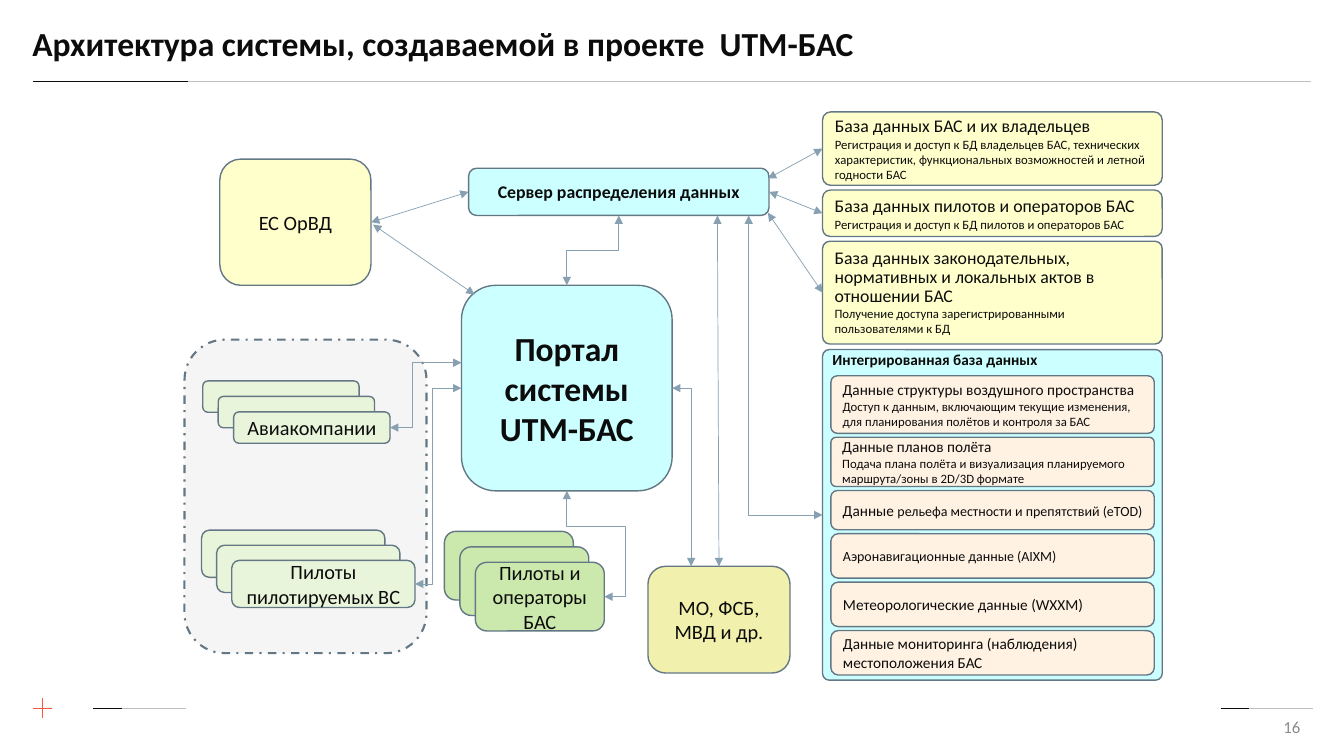
from lxml.etree import SubElement
from pptx import Presentation
from pptx.dml.color import RGBColor
from pptx.enum.dml import MSO_LINE
from pptx.enum.shapes import MSO_CONNECTOR, MSO_SHAPE
from pptx.enum.text import MSO_ANCHOR, PP_ALIGN
from pptx.oxml.ns import qn
from pptx.util import Cm, Pt

INK = RGBColor(0x0C, 0x0C, 0x0C)
PAGE_GREY = RGBColor(0x8C, 0x8C, 0x8C)
RULE = RGBColor(0xBF, 0xBF, 0xBF)
ORANGE = RGBColor(0xF7, 0x59, 0x3B)
OUTLINE = RGBColor(0x64, 0x77, 0x84)
ARROW = RGBColor(0x87, 0xA1, 0xB2)
PANEL = RGBColor(0xD9, 0xD9, 0xD9)
CYAN = RGBColor(0xCC, 0xFF, 0xFF)
YELLOW = RGBColor(0xFF, 0xFF, 0xCC)
OLIVE = RGBColor(0xF1, 0xF1, 0xAD)
GREEN = RGBColor(0xCC, 0xE9, 0xAD)
PALE_GREEN = RGBColor(0xE9, 0xF5, 0xDB)
PEACH = RGBColor(0xFF, 0xF2, 0xE3)

TOP, LEFT, BOTTOM, RIGHT = range(4)


def add_span(para, text, size, bold=False, color=INK):
    span = para.add_run()
    span.text = text
    font = span.font
    font.name, font.size, font.bold = "Calibri", Pt(size), bold
    font.color.rgb = color


def add_label(page, box, text, size, bold=False, color=INK,
              align=PP_ALIGN.LEFT, anchor=MSO_ANCHOR.TOP):
    frame = page.shapes.add_textbox(*map(Cm, box)).text_frame
    frame.word_wrap, frame.vertical_anchor = True, anchor
    frame.paragraphs[0].alignment = align
    add_span(frame.paragraphs[0], text, size, bold, color)


def add_card(page, box, fill, paras=(), align=PP_ALIGN.CENTER, bold=False, corner=None):
    """Rounded card; paras is a list of paragraphs, each a list of (text, size)."""
    card = page.shapes.add_shape(MSO_SHAPE.ROUNDED_RECTANGLE, *map(Cm, box))
    card.shadow.inherit = False
    card.fill.solid()
    card.fill.fore_color.rgb = fill
    card.line.color.rgb, card.line.width = OUTLINE, Pt(1)
    if corner is not None:
        card.adjustments[0] = corner
    frame = card.text_frame
    frame.word_wrap, frame.vertical_anchor = True, MSO_ANCHOR.MIDDLE
    for index, spans in enumerate(paras):
        para = frame.add_paragraph() if index else frame.paragraphs[0]
        para.alignment = align
        for text, size in spans:
            add_span(para, text, size, bold)
    return card


def add_stack(page, box, step, fill, text):
    """Three overlapping cards; the front one carries the text."""
    left, top, width, height = box
    for index in range(3):
        paras = [[(text, 14.5)]] if index == 2 else []
        card = add_card(page, (left + index * step, top + index * step, width, height), fill, paras)
    return card


def add_column(page, left, top, width, gap, fill, rows):
    """Cards one under another; a row is (height, corner, paragraphs)."""
    cards = []
    for height, corner, paras in rows:
        cards.append(add_card(page, (left, top, width, height), fill, paras, PP_ALIGN.LEFT, corner=corner))
        top += height + gap
    return cards


def add_arrowheads(line):
    line.color.rgb, line.width = ARROW, Pt(0.5)
    outline = line._get_or_add_ln()
    for end in ("a:headEnd", "a:tailEnd"):
        SubElement(outline, qn(end), type="triangle")


def add_line(page, start, end):
    line = page.shapes.add_connector(MSO_CONNECTOR.STRAIGHT, *start, *end)
    SubElement(line._element.spPr, qn("a:effectLst"))
    return line


def side(shape, site):
    middle_x, middle_y = shape.left + shape.width // 2, shape.top + shape.height // 2
    return {TOP: (middle_x, shape.top), LEFT: (shape.left, middle_y),
            BOTTOM: (middle_x, shape.top + shape.height),
            RIGHT: (shape.left + shape.width, middle_y)}[site]


def add_link(page, start, end, start_joint=None, end_joint=None):
    """Straight two-way arrow, joined to a (shape, site) where one is given."""
    link = add_line(page, start or side(*start_joint), end or side(*end_joint))
    add_arrowheads(link.line)
    if start_joint:
        link.begin_connect(*start_joint)
    if end_joint:
        link.end_connect(*end_joint)


def add_route(page, *points):
    """Two-way arrow with right-angled bends."""
    builder = page.shapes.build_freeform(*points[0])
    builder.add_line_segments(points[1:], close=False)
    route = builder.convert_to_shape()
    route.shadow.inherit = False
    route.fill.background()
    add_arrowheads(route.line)


def add_frame(page, box):
    """Title, rules, cross and page number."""
    left, top, width, height = box
    title = page.shapes.title
    title.left, title.top, title.width, title.height = Cm(left + 0.56), Cm(top + 0.23), Cm(24.77), Cm(1.83)
    title.text_frame.vertical_anchor = MSO_ANCHOR.MIDDLE
    para = title.text_frame.paragraphs[0]
    para.alignment, para.line_spacing = PP_ALIGN.LEFT, 0.9
    add_span(para, "Архитектура системы, создаваемой в проекте  UTM-БАС", 24, True)

    foot = top + height - 1.2
    strokes = []
    for x, y, length, accent in ((0.84, 2.06, 32.2, 3.89), (2.34, foot, 2.34, 0.73), (30.76, foot, 2.32, 0.72)):
        strokes += [(x, y, x + length, y, RULE), (x, y, x + accent, y, INK)]
    strokes += [(1.07, foot - 0.25, 1.07, foot + 0.25, ORANGE), (0.82, foot, 1.32, foot, ORANGE)]
    for x1, y1, x2, y2, color in strokes:
        line = add_line(page, (Cm(x1), Cm(y1)), (Cm(x2), Cm(y2))).line
        line.color.rgb, line.width = color, Pt(0.5)
    add_label(page, (25.4, foot - 0.05, 7.62, 1.02), "16", 12, color=PAGE_GREY,
              align=PP_ALIGN.RIGHT, anchor=MSO_ANCHOR.MIDDLE)


def add_airspace_users(page, box):
    """Dashed panel with airlines and pilots; returns the two front cards."""
    left, top = box[:2]
    panel = add_card(page, box, PANEL)
    panel.line.width, panel.line.dash_style = Pt(1.5), MSO_LINE.DASH_DOT
    color = panel._element.spPr.find(qn("a:solidFill")).find(qn("a:srgbClr"))
    SubElement(color, qn("a:alpha"), val="24000")
    airlines = add_stack(page, (left + 0.46, top + 1.04, 3.94, 0.79), 0.39, PALE_GREEN, "Авиакомпании")
    pilots = add_stack(page, (left + 0.43, top + 4.8, 4.62, 1.19), 0.38, PALE_GREEN, "Пилоты пилотируемых ВС")
    return airlines, pilots


def add_registries(page, box):
    """Three yellow databases; returns their cards."""
    left, top, width = box[:3]
    cards = add_column(page, left, top, width, 0.12, YELLOW, [
        (1.85, 0.11, [[("База данных БАС и их владельцев", 12.7)],
                      [("Регистрация и доступ к БД владельцев БАС, технических характеристик, "
                        "функциональных возможностей и летной годности БАС", 9.1)]]),
        (1.17, None, [[("База данных пилотов и операторов БАС", 12.7)],
                      [("Регистрация и доступ к БД пилотов и операторов БАС", 9.1)]]),
        (2.59, 0.07, [[("База данных законодательных, нормативных и локальных актов в отношении БАС", 12.7)],
                      [("Получение доступа зарегистрированными пользователями к БД", 9.1)]])])
    cards[2].text_frame.paragraphs[0].line_spacing = Pt(13.6)
    return cards


def add_integrated_base(page, box):
    """Cyan panel with its heading and six data cards; returns the panel."""
    left, top, width = box[:3]
    panel = add_card(page, box, CYAN, corner=0.02)
    add_label(page, (left, top - 0.1, 7.09, 0.71), "Интегрированная база данных", 10.9, True)
    add_column(page, left + 0.21, top + 0.66, width - 0.41, 0.1, PEACH, [
        (1.45, 0.11, [[("Данные структуры воздушного пространства", 10.9)],
                      [("Доступ к данным, включающим текущие изменения, "
                        "для планирования полётов и контроля за БАС", 9.1)]]),
        (1.24, 0.1, [[("Данные планов полёта", 10.9)],
                     [("Подача плана полёта и визуализация планируемого маршрута/зоны в 2D/3D формате", 9.1)]]),
        (0.99, None, [[("Данные ", 10.9), ("рельефа местности и препятствий (eTOD)", 10)]]),
        (1.12, None, [[("Аэронавигационные данные (AIXM)", 10)]]),
        (1.12, None, [[("Метеорологические данные (WXXM)", 10.9)]]),
        (1.12, None, [[("Данные мониторинга (наблюдения) местоположения БАС", 10.9)]])])
    return panel


def add_architecture(page, box):
    """The whole diagram and its arrows."""
    left, top = box[:2]

    def at(x, y):
        return Cm(left + x), Cm(top + y)

    def place(x, y, width, height):
        return left + x, top + y, width, height

    airlines, pilots = add_airspace_users(page, place(0, 5.74, 6.1, 7.9))
    portal = add_card(page, place(6.98, 4.37, 5.31, 5.18), CYAN, [[("Портал системы UTM-БАС", 24)]], bold=True)
    server = add_card(page, place(7.16, 1.42, 7.57, 1.19), CYAN, [[("Сервер распределения данных", 12.7)]], bold=True)
    control = add_card(page, place(0.89, 1.19, 3.81, 3.18), YELLOW, [[("ЕС ОрВД", 14.5)]])
    operators = add_stack(page, place(6.55, 10.57, 3.25, 1.73), 0.39, GREEN, "Пилоты и операторы БАС")
    agencies = add_card(page, place(11.68, 11.45, 3.58, 2.69), OLIVE, [[("МО, ФСБ, МВД и др.", 14.5)]])
    owners, licences, laws = add_registries(page, place(16.08, 0, 8.56, 5.85))
    integrated = add_integrated_base(page, place(16.08, 5.99, 8.56, 8.33))

    # Straight arrows
    add_link(page, None, None, (control, RIGHT), (server, LEFT))
    add_link(page, at(4.75, 2.84), at(7.31, 4.6))
    add_link(page, at(14.7, 1.68), None, end_joint=(owners, LEFT))
    add_link(page, None, None, (server, RIGHT), (licences, LEFT))
    add_link(page, at(14.7, 2.54), None, end_joint=(laws, LEFT))
    add_link(page, at(13.43, 2.61), None, end_joint=(agencies, TOP))

    # Bent arrows
    portal_top, portal_left, portal_bottom, portal_right = (side(portal, site) for site in range(4))
    server_bottom = side(server, BOTTOM)
    halfway = (portal_top[1] + server_bottom[1]) // 2
    add_route(page, portal_top, (portal_top[0], halfway), (server_bottom[0], halfway), server_bottom)
    start, turn = side(operators, RIGHT), at(11.12, 10.44)
    add_route(page, start, (turn[0], start[1]), turn, (portal_bottom[0], turn[1]), portal_bottom)
    for card, bend, end in ((pilots, 6.25, portal_left), (airlines, 5.74, (portal_left[0], at(0, 6.32)[1]))):
        start, bend_x = side(card, RIGHT), at(bend, 0)[0]
        add_route(page, start, (bend_x, start[1]), (bend_x, end[1]), end)
    for start, end in ((at(14.22, 2.61), side(integrated, LEFT)), (at(12.77, 11.45), portal_right)):
        add_route(page, start, (start[0], end[1]), end)


def main():
    deck = Presentation()
    deck.slide_width, deck.slide_height = Cm(33.87), Cm(19.05)
    page = deck.slides.add_slide(deck.slide_layouts[5])
    add_frame(page, (0, 0, 33.87, 19.05))
    add_architecture(page, (4.65, 2.82, 24.64, 14.32))
    deck.save("out.pptx")


if __name__ == "__main__":
    main()
